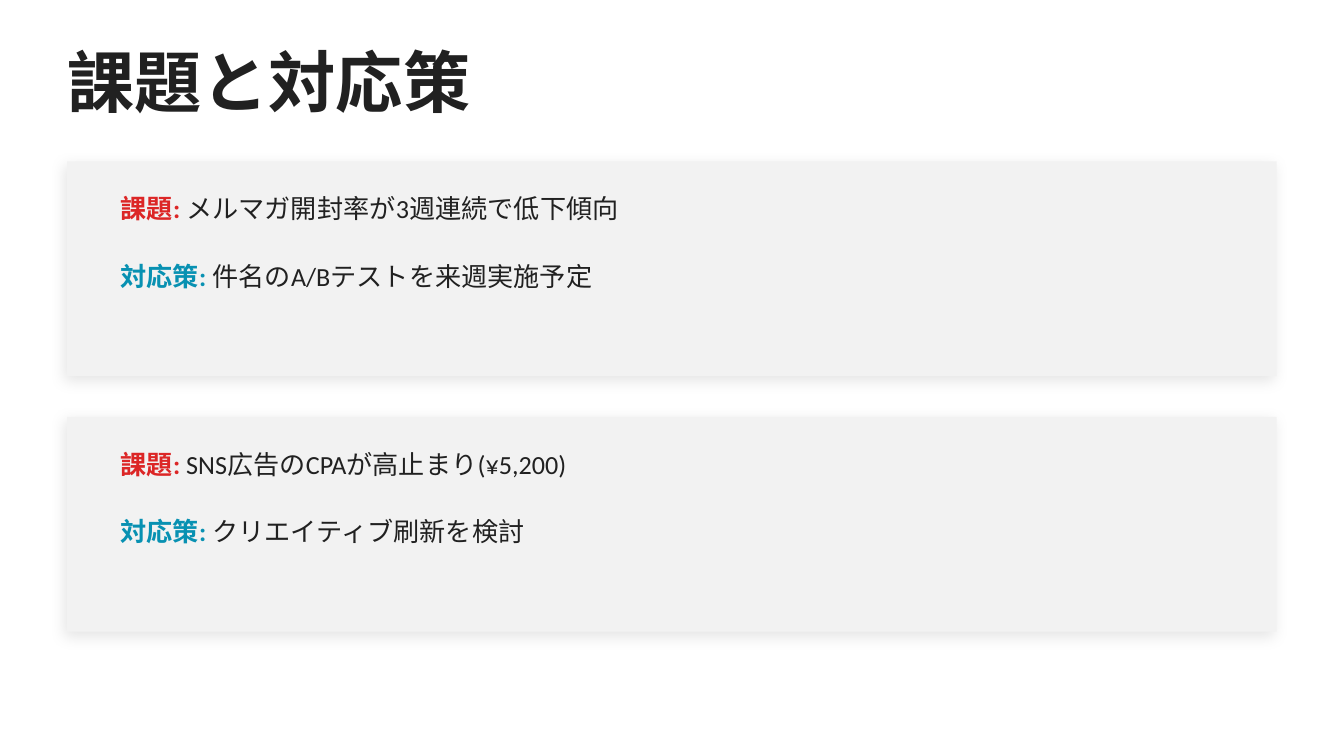
from dataclasses import dataclass

from lxml import etree
from pptx import Presentation
from pptx import util as u
from pptx.dml.color import RGBColor
from pptx.enum import shapes, text
from pptx.oxml import ns


@dataclass(frozen=True)
class Theme:
    heading_font: str = "Montserrat"
    body_font: str = "Calibri"
    heading_size: int = 36
    body_size: int = 14
    background: str = "FFFFFF"
    ink: str = "212121"
    card: str = "F2F2F2"
    issue: str = "DC2626"
    action: str = "0891B2"
    shadow: str = "000000"


THEME = Theme()
LEFT, WIDTH = 1.27, 22.86
CARD_TOP, CARD_HEIGHT, CARD_STEP = 3.05, 4.06, 4.83
LINE_INSET, LINE_OFFSET, LINE_HEIGHT, LINE_STEP = 0.76, 0.51, 0.76, 1.27

CARDS = [
    ("メルマガ開封率が3週連続で低下傾向", "件名のA/Bテストを来週実施予定"),
    ("SNS広告のCPAが高止まり(¥5,200)", "クリエイティブ刷新を検討"),
]
LABELS = [("課題: ", THEME.issue), ("対応策: ", THEME.action)]


def rgb(value):
    return RGBColor.from_string(value)


def add_line(s, left, top, width, height, runs, font, size):
    sp = s.shapes.add_textbox(u.Cm(left), u.Cm(top), u.Cm(width), u.Cm(height))
    tf = sp.text_frame
    tf.word_wrap = True
    tf.vertical_anchor = text.MSO_ANCHOR.MIDDLE
    p = tf.paragraphs[0]
    p.font.name = font
    p.font.size = u.Pt(size)
    for words, color, bold in runs:
        r = p.add_run()
        r.text = words
        r.font.bold = bold
        r.font.color.rgb = rgb(color)
    return tf


def add_title(s, words):
    tf = add_line(s, LEFT, 0.76, WIDTH, 1.52, [(words, THEME.ink, True)],
                  THEME.heading_font, THEME.heading_size)
    tf.margin_left = tf.margin_right = tf.margin_top = tf.margin_bottom = 0


def add_shadow(sp):
    sp.shadow.inherit = False
    effects = sp._element.spPr.find(ns.qn("a:effectLst"))
    shadow = etree.SubElement(
        effects, ns.qn("a:outerShdw"), blurRad=str(u.Pt(8)), dist=str(u.Pt(3)),
        dir=str(135 * 60000), algn="bl", rotWithShape="0")
    color = etree.SubElement(shadow, ns.qn("a:srgbClr"), val=THEME.shadow)
    etree.SubElement(color, ns.qn("a:alpha"), val="10000")


def add_card(s, top, bodies):
    sp = s.shapes.add_shape(shapes.MSO_SHAPE.RECTANGLE, u.Cm(LEFT), u.Cm(top),
                            u.Cm(WIDTH), u.Cm(CARD_HEIGHT))
    sp.fill.solid()
    sp.fill.fore_color.rgb = rgb(THEME.card)
    sp.line.fill.background()
    add_shadow(sp)
    for i, ((label, color), body) in enumerate(zip(LABELS, bodies)):
        add_line(s, LEFT + LINE_INSET, top + LINE_OFFSET + i * LINE_STEP,
                 WIDTH - 2 * LINE_INSET, LINE_HEIGHT,
                 [(label, color, True), (body, THEME.ink, False)],
                 THEME.body_font, THEME.body_size)


def main():
    prs = Presentation()
    prs.slide_width, prs.slide_height = u.Cm(25.4), u.Cm(14.29)
    s = prs.slides.add_slide(prs.slide_layouts[6])
    s.background.fill.solid()
    s.background.fill.fore_color.rgb = rgb(THEME.background)
    add_title(s, "課題と対応策")
    for i, bodies in enumerate(CARDS):
        add_card(s, CARD_TOP + i * CARD_STEP, bodies)
    prs.save("out.pptx")


if __name__ == "__main__":
    main()
